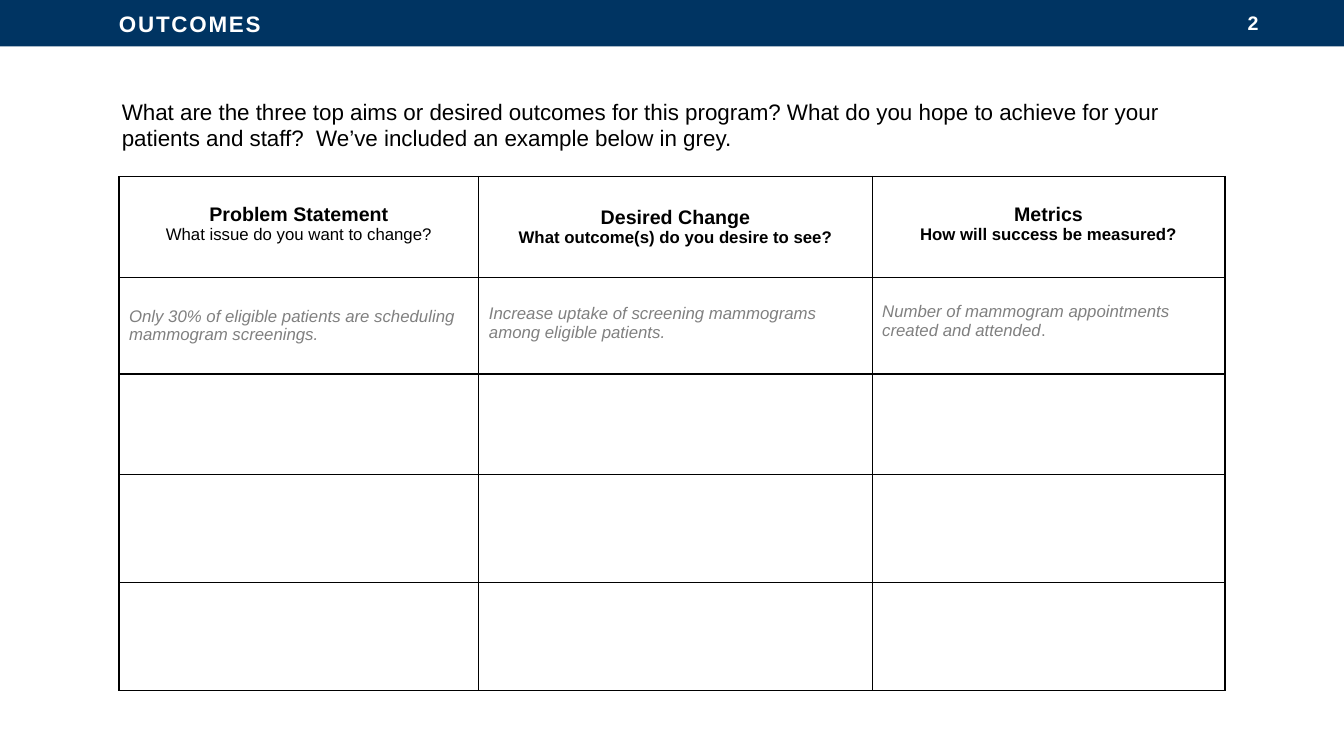
"""Build the Outcomes slide: a header bar, an intro question and a planning table."""
from lxml import etree
from pptx import Presentation
from pptx.dml.color import RGBColor
from pptx.enum.shapes import MSO_SHAPE
from pptx.enum.text import MSO_ANCHOR, PP_ALIGN
from pptx.oxml.ns import qn
from pptx.util import Inches, Pt

LEFT, CENTER, RIGHT = PP_ALIGN.LEFT, PP_ALIGN.CENTER, PP_ALIGN.RIGHT
TOP, MIDDLE = MSO_ANCHOR.TOP, MSO_ANCHOR.MIDDLE
NAVY, WHITE, BLACK, GREY = "003462", "FFFFFF", "000000", "808080"


def rgb(value):
    return RGBColor.from_string(value)


def add_run(p, text, color, **formats):
    r = p.add_run()
    r.text = text
    r.font.color.rgb = rgb(color)
    for name, value in {"name": "Arial", **formats}.items():
        setattr(r.font, name, value)
    return r


prs = Presentation()
prs.slide_width, prs.slide_height = Inches(13.33), Inches(7.5)
s = prs.slides.add_slide(prs.slide_layouts[6])

bar = s.shapes.add_shape(MSO_SHAPE.RECTANGLE, 0, 0, Inches(13.33), Inches(0.46))
bar.shadow.inherit = False
bar.fill.solid()
bar.fill.fore_color.rgb = rgb(NAVY)
bar.line.fill.background()
tf = bar.text_frame
tf.margin_left = Inches(1.18)
tf.vertical_anchor = MIDDLE
p = tf.paragraphs[0]
p.alignment = LEFT
r = add_run(p, "OUTCOMES", WHITE, size=Pt(16), bold=True)
r.font._element.set("spc", "130")

INTRO = ("What are the three top aims or desired outcomes for this program? "
         "What do you hope to achieve for your patients and staff?  "
         "We’ve included an example below in grey.")
text_boxes = [
    (INTRO, (1.11, 0.92, 11.1, 0.64), TOP, LEFT, BLACK, 16, False),
    ("2", (9.58, 0.02, 3, 0.4), MIDDLE, RIGHT, WHITE, 14, True),
]
for text, box, anchor, align, color, size, bold in text_boxes:
    tf = s.shapes.add_textbox(*map(Inches, box)).text_frame
    tf.word_wrap = True
    tf.vertical_anchor = anchor
    p = tf.paragraphs[0]
    p.alignment = align
    add_run(p, text, color, size=Pt(size), bold=bold)

col_widths = [3.57, 3.9, 3.5]
row_heights = [1, 0.96, 1, 1.07, 1.07]
table = s.shapes.add_table(
    len(row_heights), len(col_widths), Inches(1.18), Inches(1.75),
    Inches(sum(col_widths)), Inches(sum(row_heights))).table
table.first_row = table.horz_banding = False
for column, width in zip(table.columns, col_widths):
    column.width = Inches(width)
for row, height in zip(table.rows, row_heights):
    row.height = Inches(height)

for cell in table.iter_cells():
    tcPr = cell._tc.get_or_add_tcPr()
    for side in ("a:lnL", "a:lnR", "a:lnT", "a:lnB"):
        ln = etree.SubElement(tcPr, qn(side), w=str(Pt(1)))
        fill = etree.SubElement(ln, qn("a:solidFill"))
        etree.SubElement(fill, qn("a:srgbClr"), val=BLACK)
    cell.fill.background()

headers = [
    ("Problem Statement", "What issue do you want to change?", False, 0.27),
    ("Desired Change", "What outcome(s) do you desire to see?", True, 0.3),
    ("Metrics", "How will success be measured?", True, 0.27),
]
for col, (heading, question, bold, margin) in enumerate(headers):
    cell = table.cell(0, col)
    cell.margin_top = Inches(margin)
    tf = cell.text_frame
    lines = [(tf.paragraphs[0], heading, 14, True),
             (tf.add_paragraph(), question, 12, bold)]
    for p, text, size, weight in lines:
        p.alignment = CENTER
        add_run(p, text, BLACK, size=Pt(size), bold=weight)

examples = [
    ("Only 30% of eligible patients are scheduling mammogram screenings", True, MIDDLE, 0.05),
    ("Increase uptake of screening mammograms among eligible patients", True, TOP, 0.27),
    ("Number of mammogram appointments created and attended", False, TOP, 0.25),
]
for col, (text, italic_stop, anchor, margin) in enumerate(examples):
    cell = table.cell(1, col)
    cell.vertical_anchor = anchor
    cell.margin_top = Inches(margin)
    p = cell.text_frame.paragraphs[0]
    add_run(p, text, GREY, size=Pt(12), bold=False, italic=True)
    add_run(p, ".", GREY, size=Pt(12), bold=False, italic=italic_stop)

prs.save("out.pptx")
